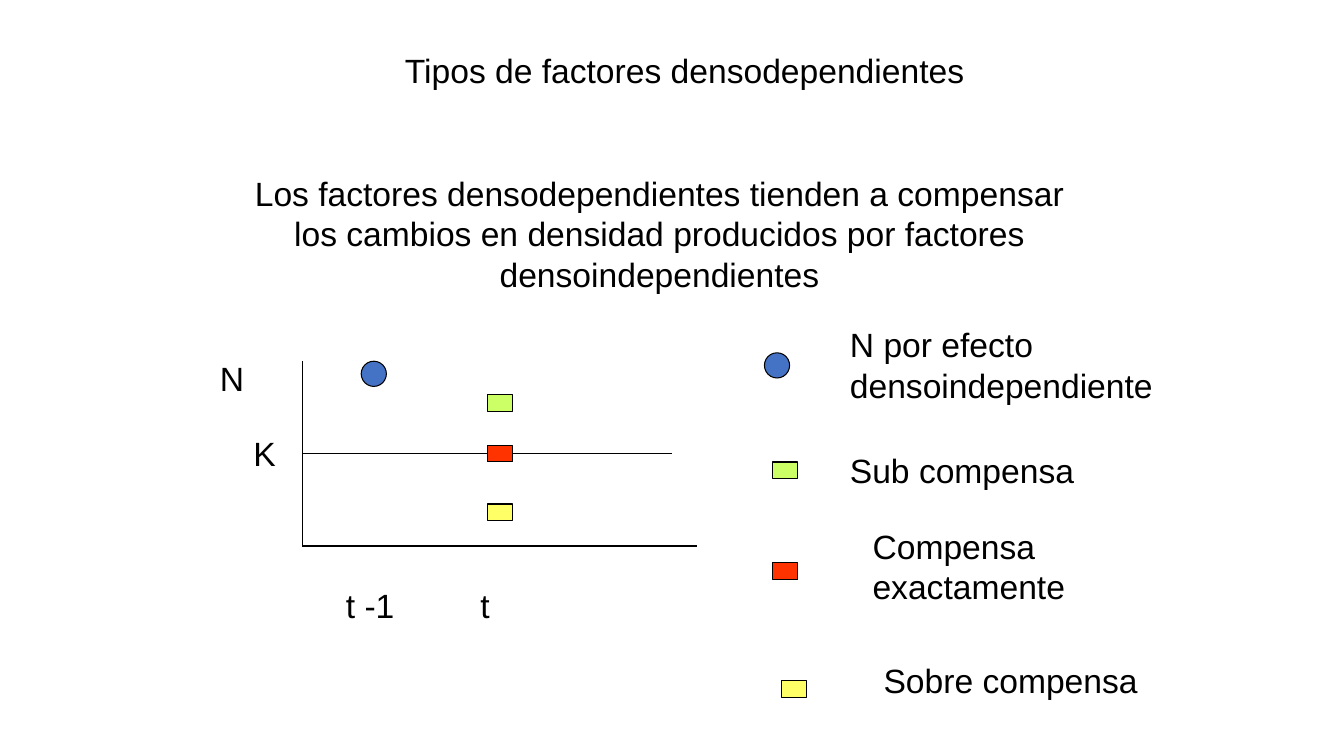
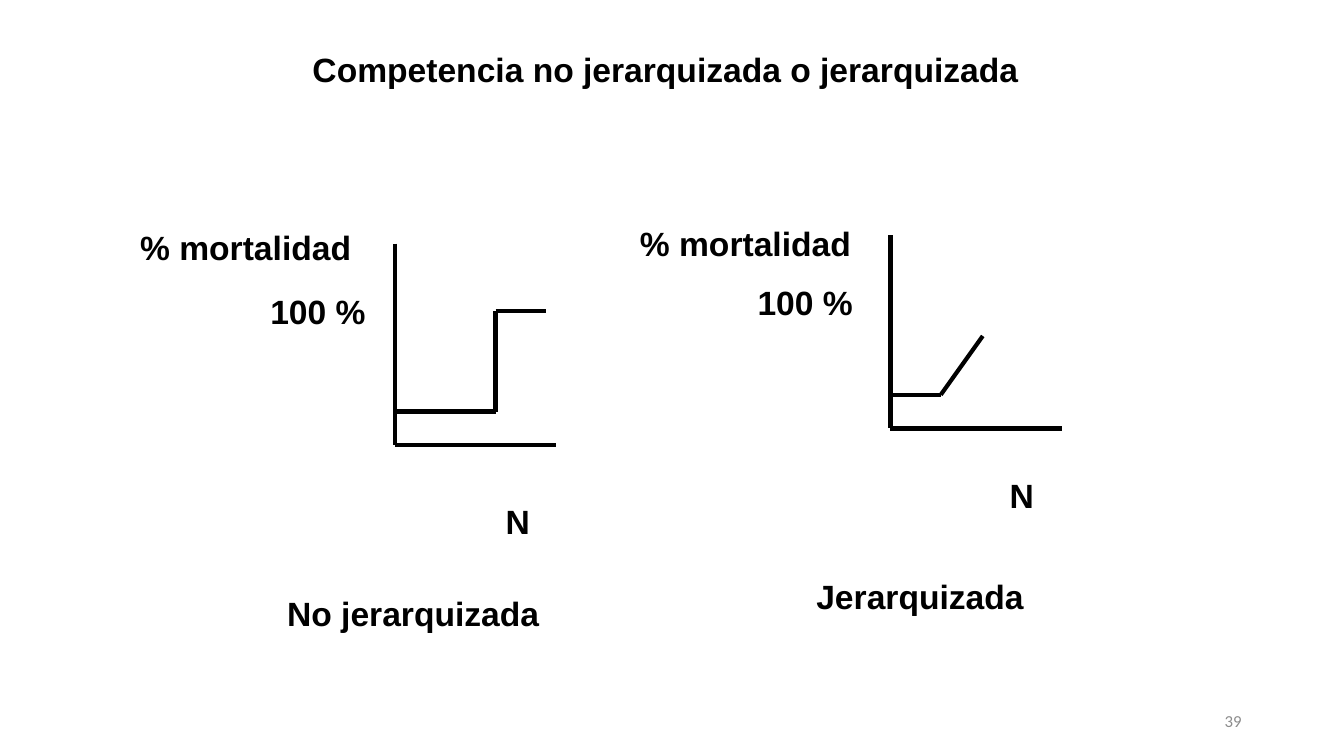
"""Build two slides on density-dependent factors and types of competition."""
from dataclasses import dataclass

from lxml.etree import SubElement
from pptx import Presentation
from pptx.dml.color import RGBColor
from pptx.enum.shapes import MSO_CONNECTOR, MSO_SHAPE
from pptx.enum.text import MSO_ANCHOR, MSO_AUTO_SIZE, PP_ALIGN
from pptx.oxml.ns import qn
from pptx.util import Inches, Pt


@dataclass(frozen=True)
class Theme:
    font: str = "Arial"
    number_font: str = "Calibri"
    ink: str = "000000"
    paper: str = "FFFFFF"
    muted: str = "8C8C8C"
    start: str = "4472C4"
    under: str = "CCFF66"
    exact: str = "FF3300"
    over: str = "FFFF66"
    size: float = 24
    number_size: float = 12
    thin: float = 0.75
    thick: float = 3


theme = Theme()
prs = Presentation()
prs.slide_width, prs.slide_height = Inches(13.33), Inches(7.5)
COLS, ROWS = 160, 90
col, row = prs.slide_width / COLS, prs.slide_height / ROWS
title_only = prs.slide_layouts[5]


def add_text(s, text, x, y, w, h=6, title=False, bold=False, align=PP_ALIGN.LEFT,
             anchor=MSO_ANCHOR.TOP, font=theme.font, size=theme.size,
             color=theme.ink, fill=None):
    box = (round(x * col), round(y * row), round(w * col), round(h * row))
    if title:
        sp = s.shapes.title
        sp.left, sp.top, sp.width, sp.height = box
    else:
        sp = s.shapes.add_textbox(*box)
    if fill:
        sp.fill.solid()
        sp.fill.fore_color.rgb = RGBColor.from_string(fill)
    tf = sp.text_frame
    tf.word_wrap = True
    tf.auto_size = MSO_AUTO_SIZE.NONE if title else MSO_AUTO_SIZE.SHAPE_TO_FIT_TEXT
    tf.vertical_anchor = anchor
    p = tf.paragraphs[0]
    p.alignment = align
    r = p.add_run()
    r.text = text
    r.font.name, r.font.size, r.font.bold = font, Pt(size), bold
    r.font.color.rgb = RGBColor.from_string(color)


def add_path(s, points, width):
    for (x1, y1), (x2, y2) in zip(points, points[1:]):
        line = s.shapes.add_connector(
            MSO_CONNECTOR.STRAIGHT, round(x1 * col), round(y1 * row),
            round(x2 * col), round(y2 * row))
        line.line.color.rgb = RGBColor.from_string(theme.ink)
        line.line.width = Pt(width)
        SubElement(line._element.spPr, qn("a:effectLst"))


s = prs.slides.add_slide(title_only)
add_text(s, "Tipos de factores densodependientes", 47, 5.3, 72, title=True)
add_text(s, "Los factores densodependientes tienden a compensar los cambios en densidad "
            "producidos por factores densoindependientes",
         27, 20, 103, 15.7, align=PP_ALIGN.CENTER)

add_path(s, [(36, 43), (36, 65), (83, 65)], theme.thin)
add_path(s, [(36, 54), (80, 54)], theme.thin)
for text, x, y, w in [("N", 25, 42, 7), ("K", 29, 51, 5),
                      ("t -1", 40, 69, 10), ("t", 56, 69, 7)]:
    add_text(s, text, x, y, w)

legend = [
    (MSO_SHAPE.OVAL, 3, theme.start, (43, 43), (91, 42),
     "N por efecto densoindependiente", (100, 38, 40, 11)),
    (MSO_SHAPE.RECTANGLE, 2, theme.under, (58, 47), (92, 55),
     "Sub compensa", (100, 53, 34, 6)),
    (MSO_SHAPE.RECTANGLE, 2, theme.exact, (58, 53), (92, 67),
     "Compensa exactamente", (102.7, 62, 30, 11)),
    (MSO_SHAPE.RECTANGLE, 2, theme.over, (58, 60), (93, 81),
     "Sobre compensa", (104, 78, 33, 6)),
]
for kind, height, color, in_graph, in_legend, text, box in legend:
    for x, y in (in_graph, in_legend):
        sp = s.shapes.add_shape(kind, round(x * col), round(y * row),
                                round(3 * col), round(height * row))
        sp.shadow.inherit = False
        sp.fill.solid()
        sp.fill.fore_color.rgb = RGBColor.from_string(color)
        sp.line.color.rgb = RGBColor.from_string(theme.ink)
        sp.line.width = Pt(theme.thin)
    add_text(s, text, *box)

s = prs.slides.add_slide(title_only)
add_text(s, "Competencia no jerarquizada o jerarquizada", 36, 5.2, 90.4,
         title=True, bold=True)
graphs = [
    ([(47, 29), (47, 53), (66.2, 53)],
     [(47, 49), (59, 49), (59, 37), (65, 37)],
     [("% mortalidad", 15.5, 26.4, 28), ("100 %", 31, 34, 15), ("N", 59, 59, 9)],
     ("No jerarquizada", 33, 70, 39)),
    ([(106, 28), (106, 51), (126.4, 51)],
     [(106, 47), (112, 47), (117, 40)],
     [("% mortalidad", 75, 25.9, 29), ("100 %", 89, 33, 15), ("N", 119, 56, 9)],
     ("Jerarquizada", 96, 68, 39)),
]
for axes, curve, labels, caption in graphs:
    add_path(s, axes, theme.thick)
    add_path(s, curve, theme.thick)
    for label in labels:
        add_text(s, *label, bold=True)
    add_text(s, *caption, bold=True, fill=theme.paper)
add_text(s, "39", 113, 83.4, 36, 4.8, align=PP_ALIGN.RIGHT, anchor=MSO_ANCHOR.MIDDLE,
         font=theme.number_font, size=theme.number_size, color=theme.muted)

prs.save("out.pptx")
